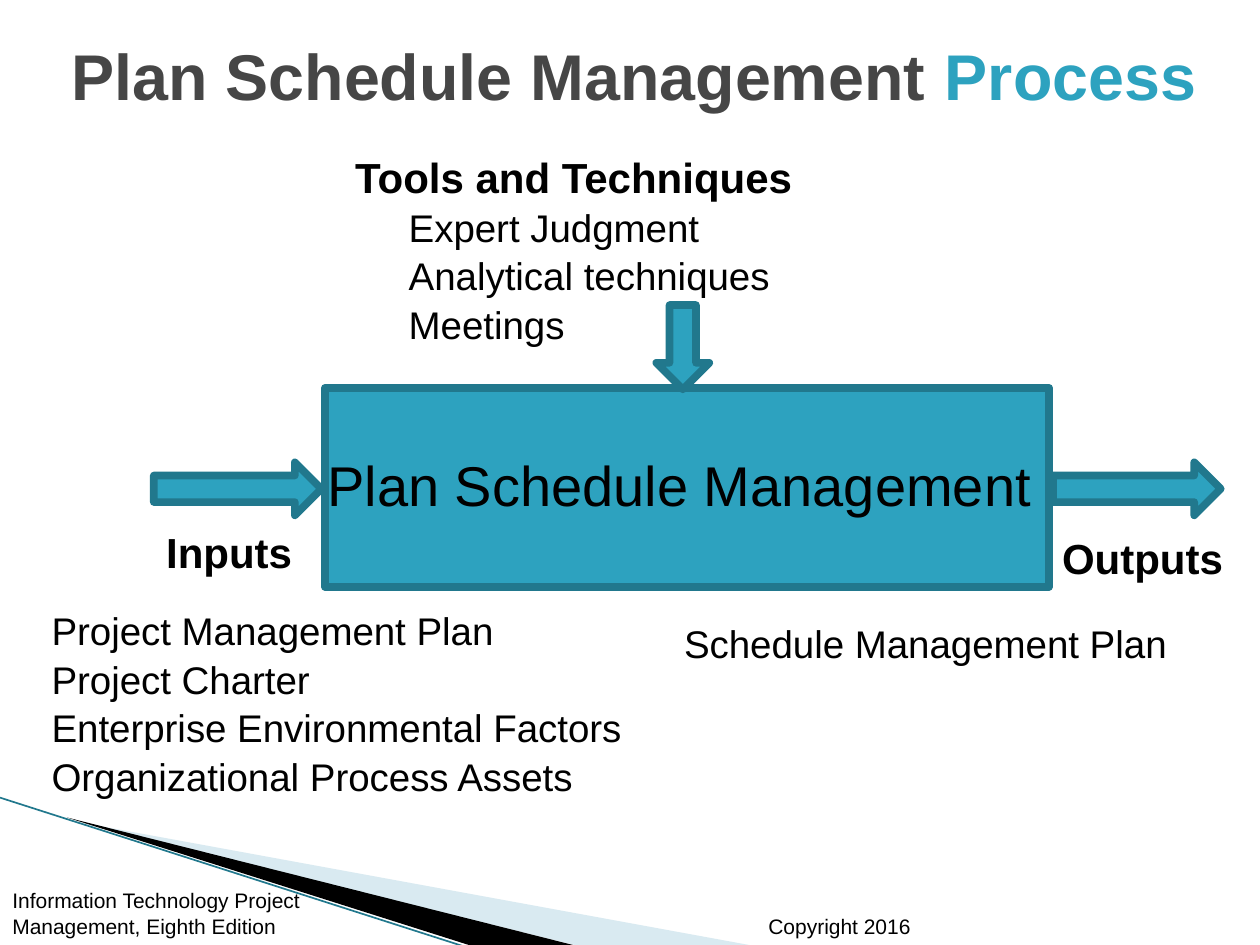
from lxml import etree
from pptx import Presentation
from pptx.dml.color import RGBColor
from pptx.enum.shapes import MSO_CONNECTOR, MSO_SHAPE as SHAPE
from pptx.enum.text import MSO_ANCHOR as ANCHOR
from pptx.oxml.ns import qn
from pptx.util import Cm, Pt

TEAL, DARK_TEAL, GREY, BLACK = "2DA2BF", "21788D", "464646", "000000"


def rgb(value):
    return RGBColor.from_string(value)


def add_text(box, paragraphs, anchor=ANCHOR.TOP):
    """Each paragraph is (indent in cm, runs); a run is (text, size, bold, colour)."""
    tf = s.shapes.add_textbox(*map(Cm, box)).text_frame
    tf.word_wrap = True
    tf.vertical_anchor = anchor
    for i, (indent, runs) in enumerate(paragraphs):
        p = tf.paragraphs[0] if i == 0 else tf.add_paragraph()
        p.line_spacing = 1.05
        if indent:
            p._p.get_or_add_pPr().set("marL", str(Cm(indent)))
        for text, size, bold, colour in runs:
            r = p.add_run()
            r.text = text
            r.font.name = "Arial"
            r.font.size = Pt(size)
            r.font.bold = bold
            r.font.color.rgb = rgb(colour)


prs = Presentation()
prs.slide_width, prs.slide_height = Cm(25.4), Cm(19.05)
s = prs.slides.add_slide(prs.slide_layouts[6])

# Corner wedges and the thin edge line
wedges = [
    ("A0CBDC", 40, [(1.4, 16.54), (15.1, 19.05), (11.58, 19.05)]),
    (BLACK, 100, [(1.35, 16.48), (11.55, 19.05), (9.45, 19.05)]),
]
for colour, opacity, points in wedges:
    start, *rest = [(Cm(x), Cm(y)) for x, y in points]
    builder = s.shapes.build_freeform(*start)
    builder.add_line_segments(rest)
    sp = builder.convert_to_shape()
    sp.shadow.inherit = False
    sp.fill.solid()
    sp.fill.fore_color.rgb = rgb(colour)
    sp.line.fill.background()
    if opacity < 100:
        clr = sp._element.spPr.find(".//" + qn("a:srgbClr"))
        etree.SubElement(clr, qn("a:alpha")).set("val", str(opacity * 1000))

edge = s.shapes.add_connector(MSO_CONNECTOR.STRAIGHT, 0, Cm(16.08), Cm(9.42), Cm(19.1))
edge.line.color.rgb = rgb(DARK_TEAL)
edge.line.width = Pt(0.95)
etree.SubElement(edge._element.spPr, qn("a:effectLst"))

# Process box with its arrows
blocks = [
    (SHAPE.RECTANGLE, 6.55, 7.82, 14.6, 4.01),
    (SHAPE.RIGHT_ARROW, 3.1, 9.32, 3.38, 1.07),
    (SHAPE.RIGHT_ARROW, 21.23, 9.32, 3.38, 1.07),
    (SHAPE.DOWN_ARROW, 13.23, 6.15, 1.07, 1.7),
]
for kind, *box in blocks:
    sp = s.shapes.add_shape(kind, *map(Cm, box))
    sp.shadow.inherit = False
    sp.fill.solid()
    sp.fill.fore_color.rgb = rgb(TEAL)
    sp.line.color.rgb = rgb(DARK_TEAL)
    sp.line.width = Pt(4.33)
    etree.SubElement(sp.line._get_or_add_ln(), qn("a:round"))

# Title
add_text((1.19, -0.13, 23.44, 3.18), [(0, [
    ("Plan Schedule Management ", 36.9, True, GREY),
    ("Process", 36.9, True, TEAL),
])], ANCHOR.MIDDLE)

# Tools and techniques
tools = ["Expert Judgment", "Analytical techniques", "Meetings"]
add_text((6.91, 2.87, 12.7, 4.11),
         [(0, [("Tools and Techniques", 24, True, BLACK)])]
         + [(1.08, [(tool, 22, False, BLACK)]) for tool in tools])

# Inputs
inputs = ["Project Management Plan", "Project Charter",
          "Enterprise Environmental Factors", "Organizational Process Assets"]
add_text((0.79, 12.07, 12.27, 4.01),
         [(0, [(item, 22, False, BLACK)]) for item in inputs])

# Single labels and footers
labels = [
    ("Plan Schedule Management", 32, False, (6.35, 8.89, 15.04, 1.63), ANCHOR.TOP),
    ("Inputs", 24, True, (3.1, 10.44, 3.81, 1.27), ANCHOR.TOP),
    ("Outputs", 24, True, (21.16, 10.57, 3.81, 1.27), ANCHOR.TOP),
    ("Schedule Management Plan", 22, False, (13.54, 12.32, 11.43, 1.19), ANCHOR.TOP),
    ("Copyright 2016", 12, False, (15.24, 18.03, 4.45, 1.02), ANCHOR.BOTTOM),
    ("Information Technology Project Management, Eighth Edition", 12, False,
     (0, 18.03, 7.19, 1.02), ANCHOR.BOTTOM),
]
for text, size, bold, box, anchor in labels:
    add_text(box, [(0, [(text, size, bold, BLACK)])], anchor)

prs.save("out.pptx")
